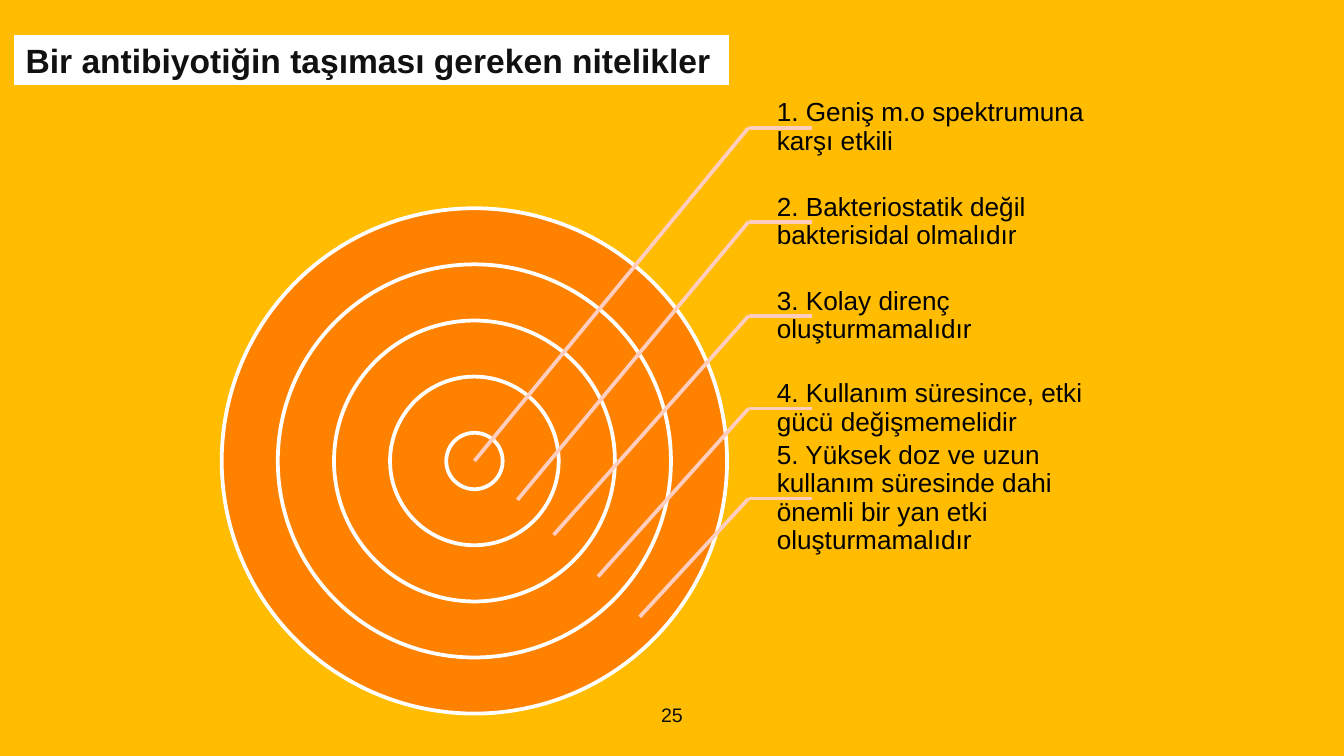
from dataclasses import dataclass

from lxml.etree import SubElement
from pptx import Presentation
from pptx.dml.color import RGBColor
from pptx.enum.shapes import MSO_CONNECTOR, MSO_SHAPE
from pptx.enum.text import MSO_ANCHOR, MSO_AUTO_SIZE, PP_ALIGN
from pptx.oxml.ns import qn
from pptx.util import Inches, Pt


@dataclass(frozen=True)
class Theme:
    background: RGBColor = RGBColor.from_string("FFBC00")
    ring: RGBColor = RGBColor.from_string("FF8100")
    white: RGBColor = RGBColor.from_string("FFFFFF")
    leader: RGBColor = RGBColor.from_string("FFCDBD")
    label: RGBColor = RGBColor.from_string("000000")
    ink: RGBColor = RGBColor.from_string("111111")
    font: str = "Arial"
    title_size: float = 18
    label_size: float = 14
    number_size: float = 10.5
    line_width: float = 2


THEME = Theme()

TITLE = "Bir antibiyotiğin taşıması gereken nitelikler"
PAGE_NUMBER = "25"
QUALITIES = [
    ("1. Geniş m.o spektrumuna karşı etkili", 0.95, (3.53, 3.43)),
    ("2. Bakteriostatik değil bakterisidal olmalıdır", 1.65, (3.85, 3.72)),
    ("3. Kolay direnç oluşturmamalıdır", 2.35, (4.12, 3.98)),
    ("4. Kullanım süresince, etki gücü değişmemelidir", 3.04, (4.45, 4.29)),
    ("5. Yüksek doz ve uzun kullanım süresinde dahi önemli bir yan etki "
     "oluşturmamalıdır", 3.71, (4.76, 4.59)),
]

CENTER_X, CENTER_Y = 3.53, 3.43
INNER_DIAMETER = 0.42
OUTER_DIAMETER = 3.76
ELBOW_X, LEADER_END_X = 5.57, 6.04
LABEL_LEFT, LABEL_WIDTH, LABEL_HEIGHT = 5.67, 2.63, 1.47


def add_run(paragraph, text, size, color, bold=False):
    run = paragraph.add_run()
    run.text = text
    run.font.name = THEME.font
    run.font.size = Pt(size)
    run.font.bold = bold
    run.font.color.rgb = color


def set_margins(frame, left, top, right, bottom):
    frame.margin_left = Inches(left)
    frame.margin_top = Inches(top)
    frame.margin_right = Inches(right)
    frame.margin_bottom = Inches(bottom)


def add_text_box(slide, left, top, width, height, margins):
    box = slide.shapes.add_textbox(
        Inches(left), Inches(top), Inches(width), Inches(height))
    frame = box.text_frame
    frame.word_wrap = True
    frame.vertical_anchor = MSO_ANCHOR.MIDDLE
    set_margins(frame, *margins)
    return frame.paragraphs[0]


def add_title(slide):
    title = slide.shapes.title
    title.left, title.top = Inches(0.09), Inches(0.25)
    title.width, title.height = Inches(5.35), Inches(0.4)
    title.fill.solid()
    title.fill.fore_color.rgb = THEME.white
    title.line.color.rgb = THEME.background
    title.line.width = Pt(THEME.line_width)
    frame = title.text_frame
    frame.word_wrap = False
    frame.auto_size = MSO_AUTO_SIZE.NONE
    frame.vertical_anchor = MSO_ANCHOR.MIDDLE
    set_margins(frame, 0.1, 0.05, 0.1, 0.05)
    paragraph = frame.paragraphs[0]
    paragraph.alignment = PP_ALIGN.LEFT
    paragraph.line_spacing = 1.0
    paragraph.space_before = Pt(0)
    add_run(paragraph, TITLE, THEME.title_size, THEME.ink, bold=True)


def add_ring(slide, diameter):
    ring = slide.shapes.add_shape(
        MSO_SHAPE.OVAL,
        Inches(CENTER_X - diameter / 2), Inches(CENTER_Y - diameter / 2),
        Inches(diameter), Inches(diameter))
    ring.shadow.inherit = False
    ring.fill.solid()
    ring.fill.fore_color.rgb = THEME.ring
    ring.line.color.rgb = THEME.white
    ring.line.width = Pt(THEME.line_width)


def add_leader(slide, start, end):
    leader = slide.shapes.add_connector(
        MSO_CONNECTOR.STRAIGHT, *(Inches(value) for value in start + end))
    leader.line.color.rgb = THEME.leader
    leader.line.width = Pt(THEME.line_width)
    SubElement(leader._element.spPr, qn("a:effectLst"))


def add_quality(slide, text, y, target):
    paragraph = add_text_box(
        slide, LABEL_LEFT, y - LABEL_HEIGHT / 2, LABEL_WIDTH, LABEL_HEIGHT,
        (0.11, 0.02, 0.02, 0.02))
    paragraph.line_spacing = 0.9
    add_run(paragraph, text, THEME.label_size, THEME.label)
    elbow = (ELBOW_X, y)
    add_leader(slide, elbow, (LEADER_END_X, y))
    add_leader(slide, elbow, target)


def main():
    presentation = Presentation()
    presentation.slide_width = Inches(10)
    presentation.slide_height = Inches(10 * 9 / 16)
    slide = presentation.slides.add_slide(presentation.slide_layouts[5])
    slide.background.fill.solid()
    slide.background.fill.fore_color.rgb = THEME.background

    add_title(slide)
    ring_count = len(QUALITIES)
    step = (OUTER_DIAMETER - INNER_DIAMETER) / (ring_count - 1)
    for index in range(ring_count):
        add_ring(slide, OUTER_DIAMETER - index * step)
    for text, y, target in QUALITIES:
        add_quality(slide, text, y, target)

    number = add_text_box(slide, 3.81, 5.12, 2.38, 0.39, (0, 0, 0, 0))
    number.alignment = PP_ALIGN.CENTER
    add_run(number, PAGE_NUMBER, THEME.number_size, THEME.ink)
    presentation.save("out.pptx")


if __name__ == "__main__":
    main()
